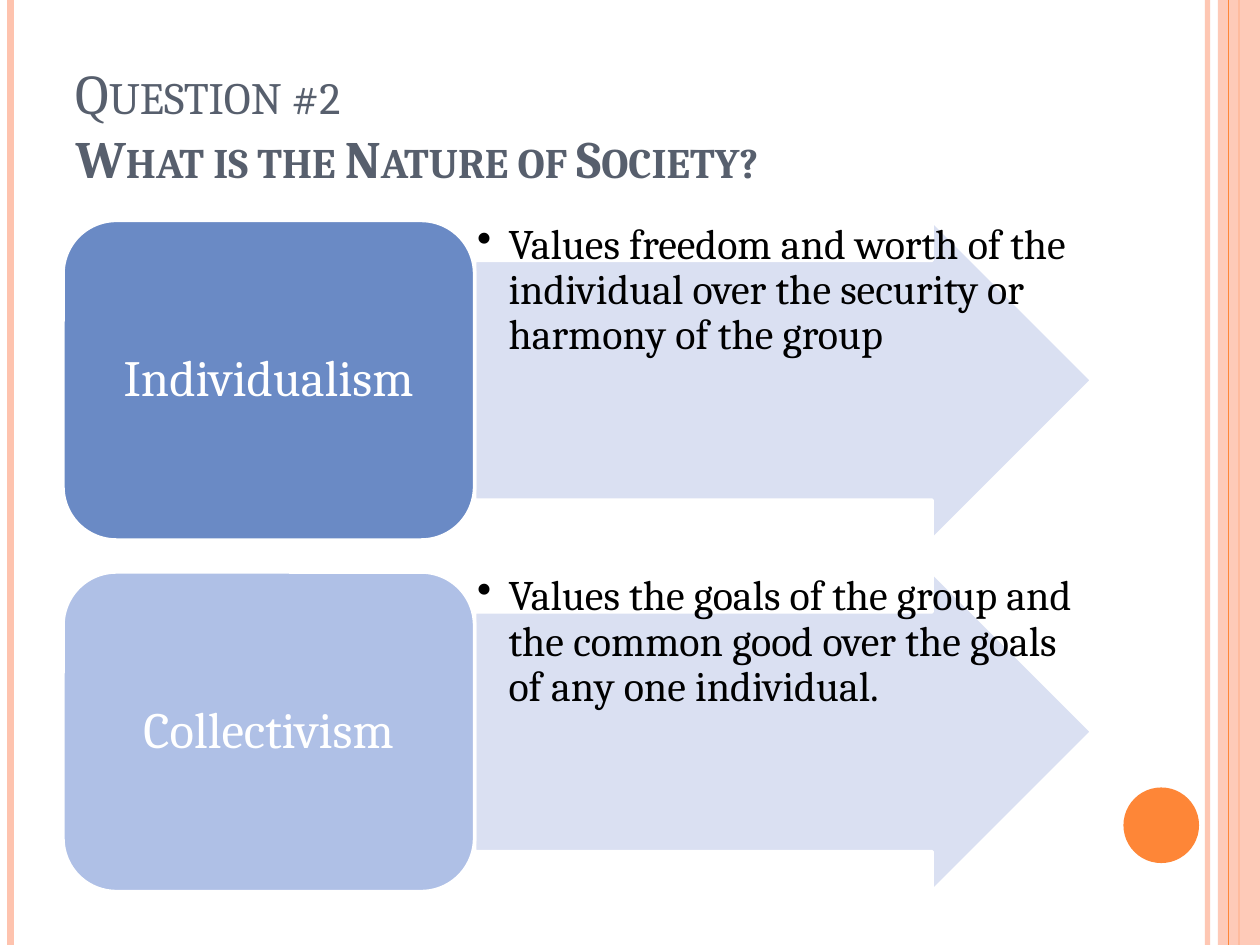
from dataclasses import dataclass

from lxml import etree
from pptx import Presentation
from pptx.dml.color import RGBColor
from pptx.enum import shapes, text
from pptx.oxml.ns import qn
from pptx.util import Pt


@dataclass(frozen=True)
class Theme:
    font: str = "Cambria"
    peach: str = "FEC3AE"
    orange: str = "FE8637"
    slate: str = "575F6D"
    arrow: str = "D6DDF1"
    strong: str = "6A8AC5"
    soft: str = "AFC0E6"
    white: str = "FFFFFF"
    black: str = "000000"
    heading: float = 32
    question: float = 30
    label: float = 29
    detail: float = 24


class SlideBuilder:
    def __init__(self, slide, theme):
        self.slide = slide
        self.theme = theme

    def apply(self, target, values):
        for name, value in values.items():
            setattr(target, name, value)

    def fade(self, fill, opacity):
        color = fill._xPr.find(".//" + qn("a:srgbClr"))
        etree.SubElement(color, qn("a:alpha"), val=str(opacity * 1000))

    def style(self, run, size, color, bold=False):
        self.apply(run.font, {"name": self.theme.font, "size": Pt(size), "bold": bold})
        run.font.color.rgb = RGBColor.from_string(color)

    def frame(self, frame, margins, anchor):
        sides = ("margin_left", "margin_top", "margin_right", "margin_bottom")
        self.apply(frame, dict(zip(sides, map(Pt, margins))))
        self.apply(frame, {"word_wrap": True, "vertical_anchor": anchor,
                           "auto_size": text.MSO_AUTO_SIZE.NONE})

    def title(self, box, lines):
        title = self.slide.shapes.title
        self.apply(title, dict(zip(("left", "top", "width", "height"), map(Pt, box))))
        self.frame(title.text_frame, (7.2, 3.6, 7.2, 3.6), text.MSO_ANCHOR.BOTTOM)
        paragraph = title.text_frame.paragraphs[0]
        paragraph.alignment = text.PP_ALIGN.LEFT
        for index, (words, size, bold) in enumerate(lines):
            if index:
                paragraph.add_line_break()
            run = paragraph.add_run()
            run.text = words
            self.style(run, size, self.theme.slate, bold)
            run._r.get_or_add_rPr().set("cap", "small")

    def rule(self, x, height, color, weight, opacity=100):
        rule = self.slide.shapes.add_connector(
            shapes.MSO_CONNECTOR.STRAIGHT, Pt(x), 0, Pt(x), Pt(height))
        rule.line.width = Pt(weight)
        rule.line.color.rgb = RGBColor.from_string(color)
        if opacity < 100:
            self.fade(rule.line.fill, opacity)
        etree.SubElement(rule._element.spPr, qn("a:effectLst"))

    def shape(self, kind, box, color, opacity=100, outlined=False):
        shape = self.slide.shapes.add_shape(kind, *map(Pt, box))
        shape.shadow.inherit = False
        shape.fill.solid()
        shape.fill.fore_color.rgb = RGBColor.from_string(color)
        if opacity < 100:
            self.fade(shape.fill, opacity)
        if outlined:
            shape.line.width = Pt(2)
            shape.line.color.rgb = RGBColor.from_string(self.theme.white)
        else:
            shape.line.fill.background()
        return shape

    def arrow(self, box):
        arrow = self.shape(shapes.MSO_SHAPE.RIGHT_ARROW, box, self.theme.arrow, 90, True)
        arrow.adjustments[0] = 0.75
        arrow.adjustments[1] = 0.5

    def label(self, box, words, color):
        card = self.shape(shapes.MSO_SHAPE.ROUNDED_RECTANGLE, box, color, outlined=True)
        self.frame(card.text_frame, (8.64, 4.32, 8.64, 4.32), text.MSO_ANCHOR.MIDDLE)
        paragraph = card.text_frame.paragraphs[0]
        self.apply(paragraph, {"alignment": text.PP_ALIGN.CENTER, "line_spacing": 0.9})
        run = paragraph.add_run()
        run.text = words
        self.style(run, self.theme.label, self.theme.white)

    def bullet(self, box, words):
        detail = self.slide.shapes.add_textbox(*map(Pt, box))
        self.frame(detail.text_frame, (1.44,) * 4, text.MSO_ANCHOR.TOP)
        paragraph = detail.text_frame.paragraphs[0]
        self.apply(paragraph, {"level": 1, "line_spacing": 0.9,
                               "alignment": text.PP_ALIGN.LEFT})
        properties = paragraph._p.get_or_add_pPr()
        for name, indent in {"marL": 18, "indent": -18}.items():
            properties.set(name, str(Pt(indent)))
        etree.SubElement(properties, qn("a:buChar"), char="•")
        run = paragraph.add_run()
        run.text = words
        self.style(run, self.theme.detail, self.theme.black)


def main():
    theme = Theme()
    width, height = 720, 540
    deck = Presentation()
    deck.slide_width, deck.slide_height = Pt(width), Pt(height)
    builder = SlideBuilder(deck.slides.add_slide(deck.slide_layouts[5]), theme)

    builder.rule(690, height, theme.peach, 3, 93)
    builder.rule(6, height, theme.peach, 4.5)
    builder.rule(708, height, theme.orange, 1.5)
    builder.shape(shapes.MSO_SHAPE.RECTANGLE, (696, 0, 24, height), theme.peach, 87)
    builder.rule(702, height, theme.orange, 0.75)
    builder.shape(shapes.MSO_SHAPE.OVAL, (642, 450, 43.2, 43.2), theme.orange)

    builder.title((36, 21.6, 588, 90), [
        ("Question #2", theme.heading, False),
        ("What is the Nature of Society?", theme.question, True),
    ])

    views = [
        ("Individualism", theme.strong,
         "Values freedom and worth of the individual over the security or harmony of the group"),
        ("Collectivism", theme.soft,
         "Values the goals of the group and the common good over the goals of any one individual."),
    ]
    left, first_top, label_width, arrow_width = 36, 126, 235.2, 352.8
    row_height, row_step = 182.6, 200.9
    for row, (view, color, belief) in enumerate(views):
        top = first_top + row * row_step
        belief_box = (left + label_width, top, arrow_width, row_height)
        builder.arrow(belief_box)
        builder.bullet(belief_box, belief)
        builder.label((left, top, label_width, row_height), view, color)

    deck.save("out.pptx")


if __name__ == "__main__":
    main()
